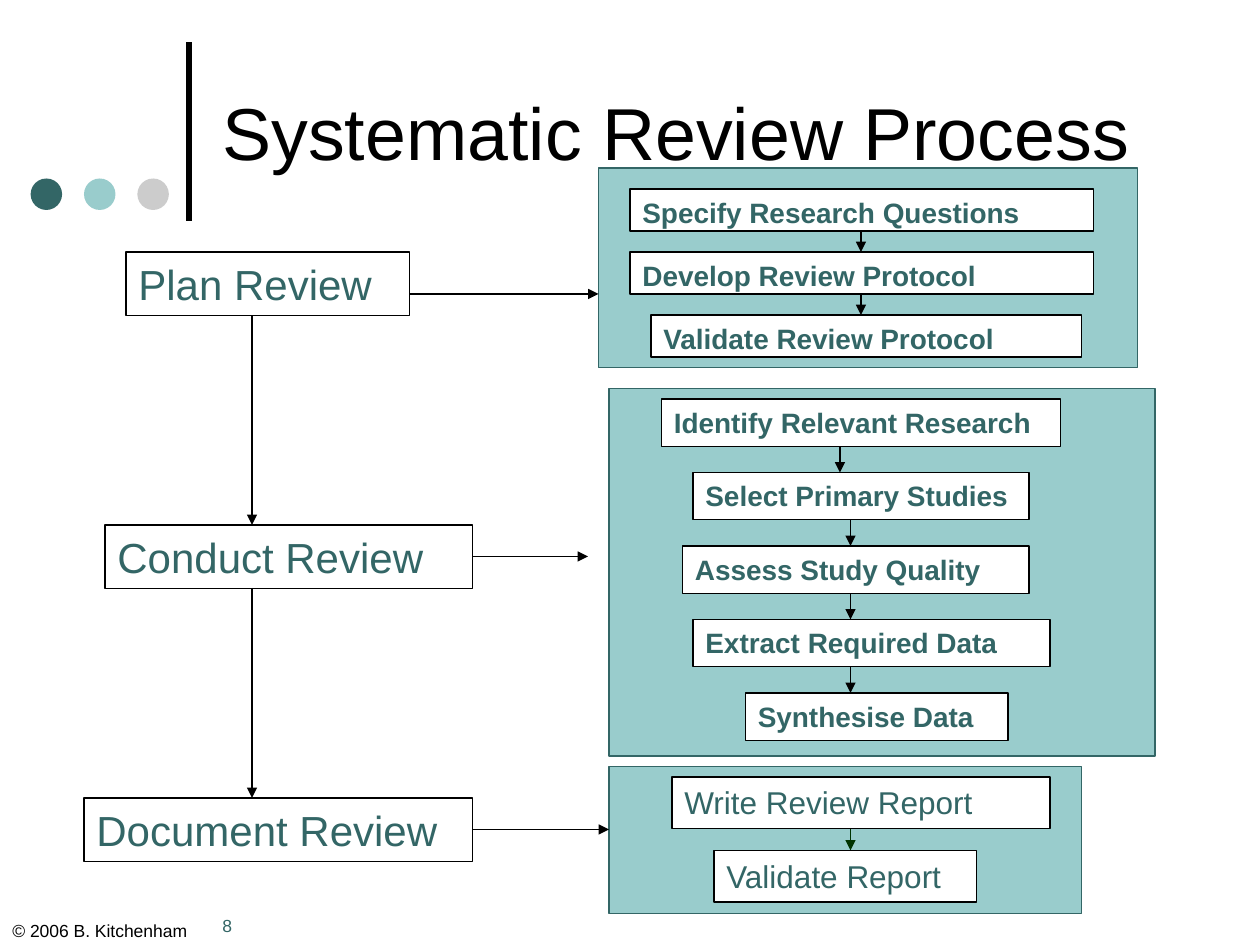
from dataclasses import dataclass
from itertools import pairwise

from lxml.etree import SubElement
from pptx import Presentation
from pptx.dml.color import RGBColor
from pptx.enum.shapes import MSO_CONNECTOR, MSO_SHAPE
from pptx.enum.text import MSO_ANCHOR, MSO_AUTO_SIZE, PP_ALIGN
from pptx.oxml.ns import qn
from pptx.shapes.autoshape import Shape
from pptx.shapes.connector import Connector
from pptx.slide import Slide
from pptx.text.text import TextFrame
from pptx.util import Pt


@dataclass(frozen=True)
class Theme:
    font: str = "Arial"
    black: str = "000000"
    white: str = "FFFFFF"
    dark_teal: str = "336666"
    light_teal: str = "99CCCC"
    grey: str = "CCCCCC"
    dark_green: str = "003300"
    title_size: float = 42
    phase_size: float = 24
    report_size: float = 18
    step_size: float = 16
    footer_size: float = 10
    thin_line: float = 0.75
    thick_line: float = 3


@dataclass(frozen=True)
class Box:
    left: float
    top: float
    width: float
    height: float


@dataclass(frozen=True)
class Step:
    text: str
    left: float
    width: float


@dataclass(frozen=True)
class Phase:
    name: str
    box: Box
    panel: Box
    arrow_top: float
    arrow_end: float
    steps: tuple[Step, ...]
    first_top: float
    pitch: float
    step_height: float
    arrow_lefts: tuple[float, ...]
    arrow_length: float
    size: float
    bold: bool
    arrow_color: str


THEME = Theme()
PHASE_HEIGHT = 36.5
PHASE_ARROW_LEFT = 144
PHASE_ARROW_LENGTH = 120

PHASES = (
    Phase(
        "Plan Review", Box(72, 144, 162, PHASE_HEIGHT), Box(342, 96, 308, 114), 168, 342,
        (
            Step("Specify Research Questions", 360, 265),
            Step("Develop Review Protocol", 360, 265),
            Step("Validate Review Protocol", 372, 246),
        ),
        108, 36, 24, (492, 492), 12, THEME.step_size, True, THEME.black,
    ),
    Phase(
        "Conduct Review", Box(60, 300, 210, PHASE_HEIGHT), Box(348, 222, 312, 210), 318, 336,
        (
            Step("Identify Relevant Research", 378, 228),
            Step("Select Primary Studies", 396, 192),
            Step("Assess Study Quality", 390, 198),
            Step("Extract Required Data", 396, 204),
            Step("Synthesise Data", 426, 150),
        ),
        228, 42, 27, (480, 486, 486, 486), 18, THEME.step_size, True, THEME.black,
    ),
    Phase(
        "Document Review", Box(48, 456, 222, PHASE_HEIGHT), Box(348, 438, 270, 84), 474, 348,
        (
            Step("Write Review Report", 384, 216),
            Step("Validate Report", 408, 150),
        ),
        444, 42, 29.5, (486,), 12, THEME.report_size, False, THEME.dark_green,
    ),
)


def write(frame: TextFrame, text: str, size: float, color: str, bold: bool = False) -> None:
    frame.auto_size = MSO_AUTO_SIZE.NONE
    paragraph = frame.paragraphs[0]
    paragraph.alignment = PP_ALIGN.LEFT
    run = paragraph.add_run()
    run.text = text
    run.font.name = THEME.font
    run.font.size = Pt(size)
    run.font.bold = bold
    run.font.color.rgb = RGBColor.from_string(color)


def add_box(slide: Slide, kind: MSO_SHAPE, box: Box, fill: str | None, line: str | None) -> Shape:
    shape = slide.shapes.add_shape(kind, Pt(box.left), Pt(box.top), Pt(box.width), Pt(box.height))
    shape.shadow.inherit = False
    if fill:
        shape.fill.solid()
        shape.fill.fore_color.rgb = RGBColor.from_string(fill)
    else:
        shape.fill.background()
    if line:
        shape.line.color.rgb = RGBColor.from_string(line)
        shape.line.width = Pt(THEME.thin_line)
    else:
        shape.line.fill.background()
    return shape


def add_label(slide: Slide, box: Box, fill: str | None, text: str, size: float, bold: bool) -> None:
    shape = add_box(slide, MSO_SHAPE.RECTANGLE, box, fill, THEME.black)
    shape.text_frame.word_wrap = True
    shape.text_frame.vertical_anchor = MSO_ANCHOR.TOP
    write(shape.text_frame, text, size, THEME.dark_teal, bold)


def add_line(slide: Slide, start: tuple[float, float], end: tuple[float, float],
             color: str, width: float) -> Connector:
    connector = slide.shapes.add_connector(
        MSO_CONNECTOR.STRAIGHT, Pt(start[0]), Pt(start[1]), Pt(end[0]), Pt(end[1]))
    connector.line.color.rgb = RGBColor.from_string(color)
    connector.line.width = Pt(width)
    SubElement(connector._element.spPr, qn("a:effectLst"))
    return connector


def add_arrow(slide: Slide, start: tuple[float, float], end: tuple[float, float], color: str) -> None:
    connector = add_line(slide, start, end, color, THEME.thin_line)
    SubElement(connector.line._get_or_add_ln(), qn("a:tailEnd"), type="triangle")


def add_text(slide: Slide, box: Box, text: str, color: str) -> None:
    shape = slide.shapes.add_textbox(Pt(box.left), Pt(box.top), Pt(box.width), Pt(box.height))
    shape.text_frame.word_wrap = False
    write(shape.text_frame, text, THEME.footer_size, color)


def add_title(slide: Slide, text: str) -> None:
    title = slide.shapes.title
    title.left, title.top, title.width, title.height = Pt(120), Pt(30), Pt(552), Pt(90)
    title.text_frame.word_wrap = True
    title.text_frame.vertical_anchor = MSO_ANCHOR.MIDDLE
    write(title.text_frame, text, THEME.title_size, THEME.black)


def add_decoration(slide: Slide) -> None:
    add_line(slide, (108, 126), (108, 24), THEME.black, THEME.thick_line)
    for index, color in enumerate((THEME.dark_teal, THEME.light_teal, THEME.grey)):
        add_box(slide, MSO_SHAPE.OVAL, Box(17.5 + 30.5 * index, 102, 18, 18), color, None)


def add_phase(slide: Slide, phase: Phase) -> None:
    """Draw a phase, its panel of steps and the arrow that joins them."""
    add_box(slide, MSO_SHAPE.RECTANGLE, phase.panel, THEME.light_teal, THEME.dark_teal)
    add_label(slide, phase.box, None, phase.name, THEME.phase_size, False)
    add_arrow(slide, (phase.box.left + phase.box.width, phase.arrow_top),
              (phase.arrow_end, phase.arrow_top), THEME.black)
    for index, left in enumerate(phase.arrow_lefts, start=1):
        bottom = phase.first_top + index * phase.pitch
        add_arrow(slide, (left, bottom - phase.arrow_length), (left, bottom), phase.arrow_color)
    for index, step in enumerate(phase.steps):
        box = Box(step.left, phase.first_top + index * phase.pitch, step.width, phase.step_height)
        add_label(slide, box, THEME.white, step.text, phase.size, phase.bold)


def main() -> None:
    presentation = Presentation()
    presentation.slide_width, presentation.slide_height = Pt(720), Pt(540)
    slide = presentation.slides.add_slide(presentation.slide_layouts[5])
    add_title(slide, "Systematic Review Process")
    add_decoration(slide)
    add_text(slide, Box(0, 522, 114, 19.5), "© 2006 B. Kitchenham", THEME.black)
    add_text(slide, Box(120, 519.5, 102, 17.5), "8", THEME.dark_teal)
    for phase in PHASES:
        add_phase(slide, phase)
    for _, following in pairwise(PHASES):
        top = following.box.top
        add_arrow(slide, (PHASE_ARROW_LEFT, top - PHASE_ARROW_LENGTH), (PHASE_ARROW_LEFT, top), THEME.black)
    presentation.save("out.pptx")


if __name__ == "__main__":
    main()
